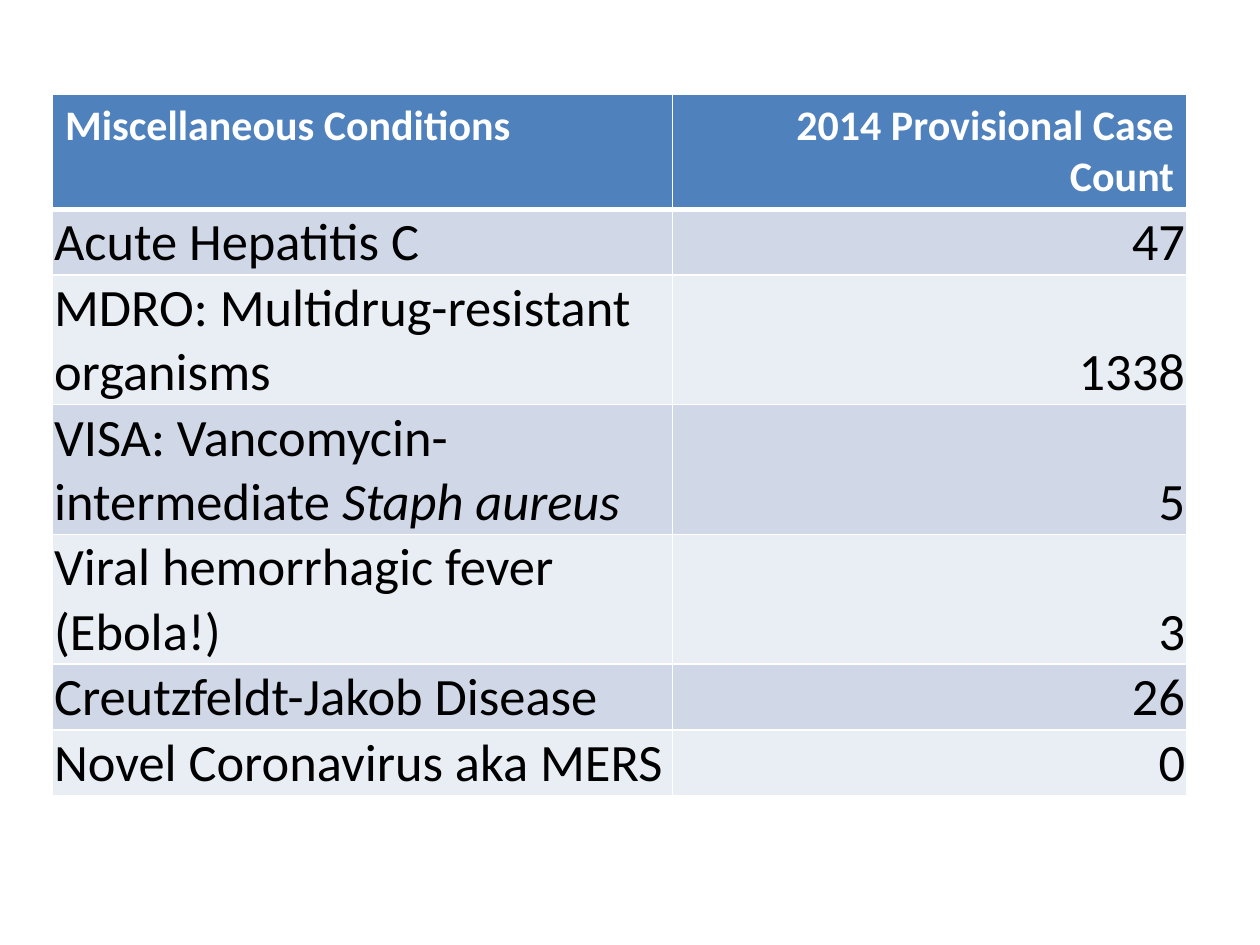
from lxml import etree
from pptx import Presentation, util as u
from pptx.dml.color import RGBColor
from pptx.enum import text
from pptx.oxml.ns import qn

COLOURS = {
    "header": "4F81BD",
    "odd": "D0D8E8",
    "even": "E9EDF4",
    "rule": "FFFFFF",
    "header_text": "FFFFFF",
    "body_text": "000000",
}
HEADINGS = ("Miscellaneous Conditions", "2014 Provisional Case Count")
# Each condition is a list of (wording, italic) runs.
CASES = [
    ([("Acute Hepatitis C", False)], 47),
    ([("MDRO: Multidrug-resistant organisms", False)], 1338),
    ([("VISA: Vancomycin-intermediate ", False), ("Staph aureus", True)], 5),
    ([("Viral hemorrhagic fever (Ebola!)", False)], 3),
    ([("Creutzfeldt-Jakob Disease", False)], 26),
    ([("Novel Coronavirus aka MERS", False)], 0),
]
ALIGNMENTS = (text.PP_ALIGN.LEFT, text.PP_ALIGN.RIGHT)
COLUMN_WIDTHS = (u.Cm(12.5), u.Cm(10.36))
ROW_HEIGHT = u.Cm(1.04)


class CaseSlide:
    header_font = {"name": "Calibri", "size": u.Pt(24), "bold": True}
    body_font = {"name": "Calibri", "size": u.Pt(30), "bold": False}
    body_cell = {
        "vertical_anchor": text.MSO_ANCHOR.BOTTOM,
        "margin_left": u.Cm(0.03),
        "margin_right": u.Cm(0.03),
        "margin_top": u.Cm(0.03),
        "margin_bottom": 0,
    }

    def __init__(self, slide):
        self.slide = slide

    @staticmethod
    def apply(target, formats):
        for attribute, value in formats.items():
            setattr(target, attribute, value)

    def borders(self, cell, top, bottom):
        """Rule all four sides; top and bottom widths are in points."""
        properties = cell._tc.get_or_add_tcPr()
        for side, width in (("L", 1), ("R", 1), ("T", top), ("B", bottom)):
            rule = etree.SubElement(properties, qn(f"a:ln{side}"), w=str(u.Pt(width)))
            fill = etree.SubElement(rule, qn("a:solidFill"))
            etree.SubElement(fill, qn("a:srgbClr"), val=COLOURS["rule"])

    def cell(self, cell, runs, alignment, font, text_colour, fill_colour):
        cell.fill.solid()
        cell.fill.fore_color.rgb = RGBColor.from_string(COLOURS[fill_colour])
        paragraph = cell.text_frame.paragraphs[0]
        paragraph.alignment = alignment
        for wording, italic in runs:
            run = paragraph.add_run()
            run.text = wording
            self.apply(run.font, {**font, "italic": italic})
            run.font.color.rgb = RGBColor.from_string(COLOURS[text_colour])

    def header_row(self, table):
        for column, heading in enumerate(HEADINGS):
            cell = table.cell(0, column)
            self.borders(cell, top=1, bottom=3)
            self.cell(cell, [(heading, False)], ALIGNMENTS[column],
                      self.header_font, "header_text", "header")

    def case_row(self, table, row, condition, count):
        band = "odd" if row % 2 else "even"
        for column, runs in enumerate((condition, [(str(count), False)])):
            cell = table.cell(row, column)
            self.borders(cell, top=3 if row == 1 else 1, bottom=1)
            self.apply(cell, self.body_cell)
            self.cell(cell, runs, ALIGNMENTS[column],
                      self.body_font, "body_text", band)

    def case_table(self, left, top, height):
        frame = self.slide.shapes.add_table(
            len(CASES) + 1, len(HEADINGS), left, top, sum(COLUMN_WIDTHS), height)
        table = frame.table
        for column, width in zip(table.columns, COLUMN_WIDTHS):
            column.width = width
        for row in table.rows:
            row.height = ROW_HEIGHT
        frame.height = height
        self.header_row(table)
        for row, (condition, count) in enumerate(CASES, start=1):
            self.case_row(table, row, condition, count)


def main():
    deck = Presentation()
    deck.slide_width, deck.slide_height = u.Cm(25.4), u.Cm(19.05)
    page = CaseSlide(deck.slides.add_slide(deck.slide_layouts[6]))
    page.case_table(u.Cm(1.06), u.Cm(1.9), u.Cm(13.87))
    deck.save("out.pptx")


if __name__ == "__main__":
    main()
